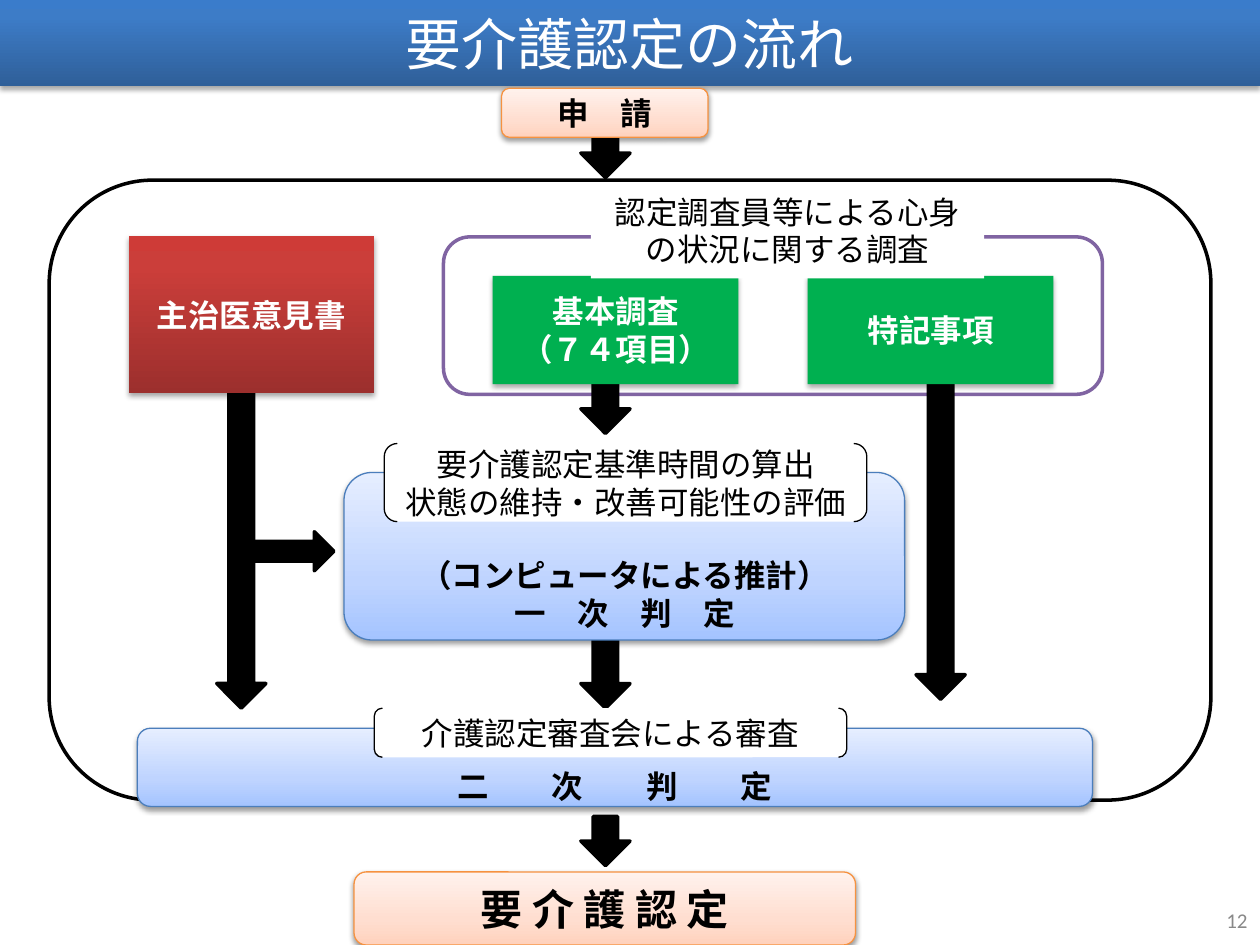
from copy import deepcopy

from lxml import etree
from pptx import Presentation
from pptx.dml.color import RGBColor
from pptx.enum.shapes import MSO_SHAPE
from pptx.enum.text import MSO_ANCHOR, PP_ALIGN
from pptx.oxml.ns import qn
from pptx.util import Inches, Pt

RECT, ROUND = MSO_SHAPE.RECTANGLE, MSO_SHAPE.ROUNDED_RECTANGLE
DOWN, RIGHT = MSO_SHAPE.DOWN_ARROW, MSO_SHAPE.RIGHT_ARROW
PAIR = MSO_SHAPE.DOUBLE_BRACKET
MIDDLE, TOP = MSO_ANCHOR.MIDDLE, MSO_ANCHOR.TOP
CENTER, END = PP_ALIGN.CENTER, PP_ALIGN.RIGHT

BLACK, WHITE = RGBColor(0, 0, 0), RGBColor(255, 255, 255)
GREEN = RGBColor(0x00, 0xB0, 0x50)
PURPLE = RGBColor(0x80, 0x64, 0xA2)
ORANGE = RGBColor(0xF6, 0x92, 0x40)
BLUE = RGBColor(0x4B, 0x7E, 0xBC)
GRAY = RGBColor(0x89, 0x89, 0x89)
# Gradients run from bottom to top
PEACH = [(0, RGBColor(0xFF, 0xD2, 0xBD)), (0.35, RGBColor(0xFF, 0xDE, 0xD0)),
         (1, RGBColor(0xFF, 0xF2, 0xED))]
SKY = [(0, RGBColor(0xA4, 0xC4, 0xFF)), (0.35, RGBColor(0xBF, 0xD4, 0xFF)),
       (1, RGBColor(0xE6, 0xEE, 0xFF))]
RED = [(0, RGBColor(0x9C, 0x2F, 0x2D)), (0.8, RGBColor(0xCB, 0x3E, 0x3A)),
       (1, RGBColor(0xCE, 0x3B, 0x37))]
NAVY = [(0, RGBColor(0x2F, 0x5F, 0x99)), (0.8, RGBColor(0x3D, 0x7C, 0xC7)),
        (1, RGBColor(0x3A, 0x7C, 0xCB))]

# style: fill, line, line width, shadow distance, shadow opacity, text, bold
STYLES = {
    "arrow": (BLACK, BLACK, 2, 0, 0, BLACK, False),
    "frame": (WHITE, BLACK, 2, 0, 0, BLACK, False),
    "survey": (WHITE, PURPLE, 2, 0, 0, BLACK, False),
    "label": (WHITE, None, 0, 0, 0, BLACK, False),
    "note": (WHITE, BLACK, 0.75, 0, 0, BLACK, False),
    "end": (PEACH, ORANGE, 0.75, 1.6, 38, BLACK, True),
    "judge": (SKY, BLUE, 0.75, 1.6, 38, BLACK, True),
    "doctor": (RED, None, 0, 1.8, 35, WHITE, True),
    "item": (GREEN, None, 0, 1.8, 35, WHITE, True),
    "title": (NAVY, None, 0, 1.8, 35, WHITE, False),
}


def paint(shape, style):
    """Give a shape the fill, line and shadow of a style."""
    fill, line, width, dist, alpha = STYLES[style][:5]
    if isinstance(fill, list):
        shape.fill.gradient()
        shape.fill.gradient_angle = 90
        stops = shape._element.spPr.find(".//" + qn("a:gsLst"))
        stops.append(deepcopy(stops[0]))
        for stop, (pos, color) in zip(shape.fill.gradient_stops, fill):
            stop.position, stop.color.rgb = pos, color
    else:
        shape.fill.solid()
        shape.fill.fore_color.rgb = fill
    if line is None:
        shape.line.fill.background()
    else:
        shape.line.color.rgb = line
        shape.line.width = Pt(width)
    shape.shadow.inherit = False
    if dist:
        effects = shape._element.spPr.find(qn("a:effectLst"))
        outer = etree.SubElement(
            effects, qn("a:outerShdw"), blurRad=str(Pt(3.1)),
            dist=str(Pt(dist)), dir="5400000", rotWithShape="0")
        color = etree.SubElement(outer, qn("a:srgbClr"), val="000000")
        etree.SubElement(color, qn("a:alpha"), val=str(alpha * 1000))


def write(shape, text, size, color, bold=False, font="Noto Sans CJK JP",
          align=CENTER, anchor=MIDDLE):
    frame = shape.text_frame
    frame.text = text
    frame.word_wrap = True
    frame.vertical_anchor = anchor
    for para in frame.paragraphs:
        para.alignment = align
        para.line_spacing = Pt(size * 1.2)
        for run in para.runs:
            run.font.size, run.font.bold = Pt(size), bold
            run.font.name, run.font.color.rgb = font, color
            east = etree.SubElement(run.font._element, qn("a:ea"))
            east.set("typeface", "Noto Sans CJK JP")


prs = Presentation()
prs.slide_width, prs.slide_height = Inches(10), Inches(7.5)
slide = prs.slides.add_slide(prs.slide_layouts[5])

title = slide.shapes.title
title.left, title.top = Inches(0), Inches(0)
title.width, title.height = Inches(10), Inches(0.68)
paint(title, "title")
write(title, "要介護認定の流れ", 32, WHITE, font="Calibri")

# kind, left, top, width, height, style, text; from back to front
PARTS = [
    (DOWN, 4.61, 0.94, 0.39, 0.47, "arrow", ""),
    (ROUND, 3.98, 0.7, 1.64, 0.39, "end", "申　請"),
    (ROUND, 0.39, 1.43, 9.22, 4.92, "frame", ""),
    (DOWN, 1.72, 3.12, 0.39, 2.5, "arrow", ""),
    (RECT, 1.02, 1.87, 1.95, 1.25, "doctor", "主治医意見書"),
    (ROUND, 3.52, 1.88, 5.23, 1.25, "survey", ""),
    (DOWN, 4.61, 2.97, 0.39, 0.47, "arrow", ""),
    (DOWN, 7.27, 2.97, 0.39, 2.58, "arrow", ""),
    (RECT, 3.91, 2.19, 1.95, 0.86, "item", "基本調査\n（７４項目）"),
    (RECT, 6.41, 2.19, 1.95, 0.86, "item", "特記事項"),
    (RECT, 4.69, 1.48, 3.12, 0.73, "label",
     "認定調査員等による心身の状況に関する調査"),
    (DOWN, 4.61, 5, 0.39, 0.62, "arrow", ""),
    (ROUND, 2.73, 3.75, 4.45, 1.33, "judge",
     "（コンピュータによる推計）\n一　次　判　定"),
    (PAIR, 3.05, 3.52, 3.83, 0.62, "note",
     "要介護認定基準時間の算出\n状態の維持・改善可能性の評価"),
    (RIGHT, 1.95, 4.22, 0.7, 0.31, "arrow", ""),
    (ROUND, 1.09, 5.78, 7.58, 0.62, "judge", "二　　次　　判　　定"),
    (PAIR, 2.97, 5.62, 3.75, 0.39, "note", "介護認定審査会による審査"),
    (DOWN, 4.61, 6.48, 0.39, 0.39, "arrow", ""),
    (ROUND, 2.81, 6.92, 3.98, 0.58, "end", "要 介 護 認 定"),
]
for kind, left, top, width, height, style, text in PARTS:
    shape = slide.shapes.add_shape(
        kind, Inches(left), Inches(top), Inches(width), Inches(height))
    paint(shape, style)
    if text:
        size = 24 if text.startswith("要 ") else 18
        write(shape, text, size, *STYLES[style][5:],
              anchor=TOP if style == "label" else MIDDLE)
    if style == "judge":
        # Keep the text below the bracketed note on the upper edge
        shape.text_frame.margin_top = Inches(0.3 * len(text.split("\n")))
        shape.text_frame.margin_bottom = Inches(0)

number = slide.shapes.add_textbox(
    Inches(7.67), Inches(7.1), Inches(2.33), Inches(0.4))
write(number, "12", 12, GRAY, font="Calibri", align=END)

prs.save("out.pptx")
